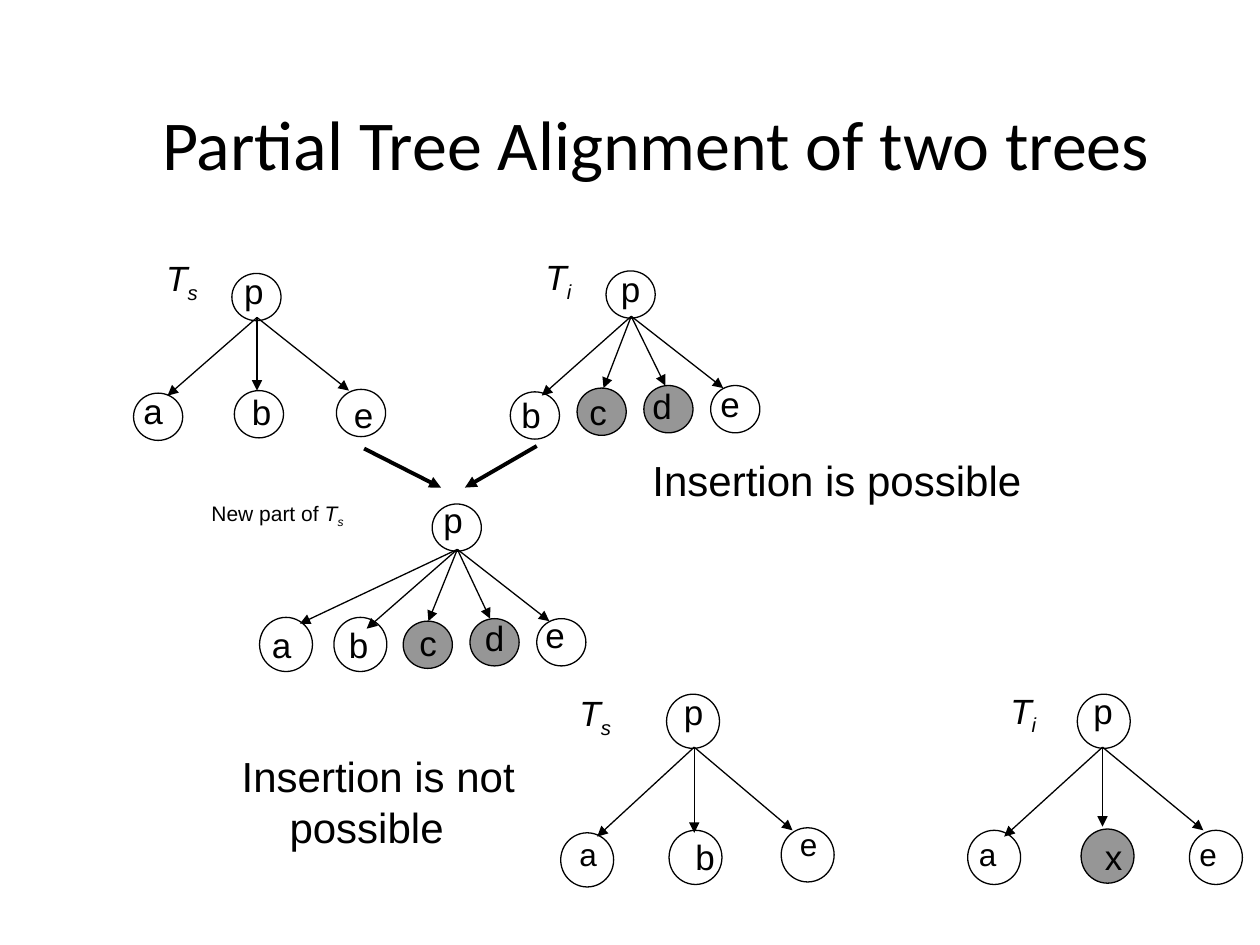
"""Build the slide on the partial alignment of two trees."""
from lxml import etree
from pptx import Presentation
from pptx.dml.color import RGBColor
from pptx.enum.shapes import MSO_CONNECTOR, MSO_SHAPE
from pptx.enum.text import MSO_ANCHOR, PP_ALIGN
from pptx.oxml.ns import qn
from pptx.util import Inches, Pt

OVAL = MSO_SHAPE.OVAL
LINE = MSO_CONNECTOR.STRAIGHT
MIDDLE = MSO_ANCHOR.MIDDLE
CENTER = PP_ALIGN.CENTER
TITLE_ONLY = 5


def paint(code):
    return RGBColor.from_string(code)


def write(para, text, size=20, face="Arial", ink="000000", slant=False, base=0):
    run = para.add_run()
    run.text = text
    font = run.font
    font.size, font.name, font.italic = Pt(size), face, slant
    font.color.rgb = paint(ink)
    if base:
        run._r.get_or_add_rPr().set("baseline", str(base * 1000))


class Board:
    ink, plain, grey = "000000", "FFFFFF", "969696"
    added = "cdx"
    thin, thick = 0.75, 2.25

    def __init__(self, deck):
        self.cell = deck.slide_width / 100
        self.slide = deck.slides.add_slide(deck.slide_layouts[TITLE_ONLY])
        self.shapes = self.slide.shapes

    def grid(self, *spots):
        return [round(spot * self.cell) for spot in spots]

    def title(self, text, *place):
        head = self.shapes.title
        head.left, head.top, head.width, head.height = self.grid(*place)
        frame = head.text_frame
        frame.vertical_anchor = MIDDLE
        para = frame.paragraphs[0]
        para.alignment = CENTER
        write(para, text, size=40, face="Calibri")

    def text(self, place, *parts, **style):
        frame = self.shapes.add_textbox(*self.grid(*place)).text_frame
        frame.word_wrap = True
        para = frame.paragraphs[0]
        props = para._p.get_or_add_pPr()
        hang = Inches(0.38)
        props.set("marL", str(hang))
        props.set("indent", str(-hang))
        for part, extra in parts:
            write(para, part, **{**style, **extra})

    def label(self, left, top, sub, lead="", size=20, width=6):
        parts = [("T", {"slant": True}), (sub, {"slant": True, "base": -25})]
        if lead:
            parts.insert(0, (lead, {}))
        self.text((left, top, width, 6), *parts, size=size)

    def node(self, left, top, mark, big):
        size = (4.2, 4.3) if big else (3.9, 3.75)
        oval = self.shapes.add_shape(OVAL, *self.grid(left, top, *size))
        oval.shadow.inherit = False
        oval.fill.solid()
        fill = self.grey if mark in self.added else self.plain
        oval.fill.fore_color.rgb = paint(fill)
        oval.line.color.rgb = paint(self.ink)
        oval.line.width = Pt(self.thin)

    def arrow(self, start, end, weight=thin):
        line = self.shapes.add_connector(LINE, *self.grid(*start, *end))
        line.line.color.rgb = paint(self.ink)
        line.line.width = Pt(weight)
        props = line._element.spPr
        etree.SubElement(props.find(qn("a:ln")), qn("a:tailEnd"), type="triangle")
        etree.SubElement(props, qn("a:effectLst"))

    def tree(self, apex, root, leaves, big="", small=""):
        """Draw a root and its leaves: mark, node, letter and arrow tip."""
        marks = [("p", *root), *leaves]
        for mark, spot, *_ in marks:
            self.node(*spot, mark, mark in big)
        for *_, tip in leaves:
            self.arrow(apex, tip)
        for mark, _, spot, *_ in marks:
            size = 18 if mark in small else 20
            self.text((*spot, 8, 6.5), (mark, {}), size=size)


def main():
    deck = Presentation()
    deck.slide_width, deck.slide_height = Inches(10), Inches(7.5)
    board = Board(deck)
    board.title("Partial Tree Alignment of two trees", 7.5, 3.3, 89.1, 16)

    board.tree((20.4, 25.2), ((18.4, 21.7), (18.4, 20.9)), [
        ("a", (10.6, 31.2), (10.4, 30.4), (13.3, 31.4)),
        ("b", (18.6, 31), (19, 30.5), (20.4, 31)),
        ("e", (26.7, 30.9), (27.1, 30.7), (27.7, 31)),
    ])
    board.tree((50.1, 25.1), ((48.1, 21.5), (48.3, 20.7)), [
        ("b", (40.5, 31.1), (40.4, 30.7), (43, 31.4)),
        ("c", (45.8, 30.8), (45.8, 30.5), (47.9, 30.8)),
        ("d", (51.1, 30.6), (50.8, 30), (52.8, 30.6)),
        ("e", (56.4, 30.6), (56.2, 29.9), (57.4, 30.8)),
    ])
    board.arrow((28.9, 35.6), (35, 38.7), board.thick)
    board.arrow((42.6, 35.4), (36.9, 38.7), board.thick)
    board.tree((36.3, 43.6), ((34.3, 40), (34.2, 39.1)), [
        ("a", (20.6, 49), (20.6, 49), (23.8, 49.5)),
        ("b", (26.5, 49), (26.7, 49), (29.1, 49.9)),
        ("c", (32, 49.3), (32.3, 48.8), (34, 49.3)),
        ("d", (37.3, 49.1), (37.5, 48.4), (38.9, 49.1)),
        ("e", (42.6, 49.1), (42.3, 48.2), (43.6, 49.3)),
    ], big="ab")
    board.tree((55.1, 59.3), ((52.9, 55.1), (53.3, 54.3)), [
        ("a", (44.5, 66.1), (45, 65.8), (47.4, 66.4)),
        ("b", (53.1, 65.9), (54.2, 65.8), (55.1, 66.1)),
        ("e", (62, 65.7), (62.5, 65), (62.9, 65.9)),
    ], big="pabe", small="ae")
    board.tree((87.5, 59.3), ((85.5, 55.1), (85.8, 54.2)), [
        ("a", (76.8, 65.9), (76.7, 65.8), (79.7, 66.4)),
        ("x", (85.8, 65.8), (86.7, 65.8), (87.5, 65.6)),
        ("e", (94.4, 65.9), (94.2, 65.8), (95.5, 65.9)),
    ], big="paxe", small="ae")

    for left, top, sub in [(12.2, 19.9, "s"), (42.3, 19.8, "i"),
                           (45, 54.4, "s"), (79.2, 54.2, "i")]:
        board.label(left, top, sub)
    board.label(15.8, 39.2, "s", lead="New part of ", size=12, width=19.9)
    board.text((50.8, 35.6, 34.2, 5), ("Insertion is possible", {}), size=24)
    board.text((18.2, 59.1, 25, 9), ("Insertion is not possible", {}), size=24)
    deck.save("out.pptx")


if __name__ == "__main__":
    main()
